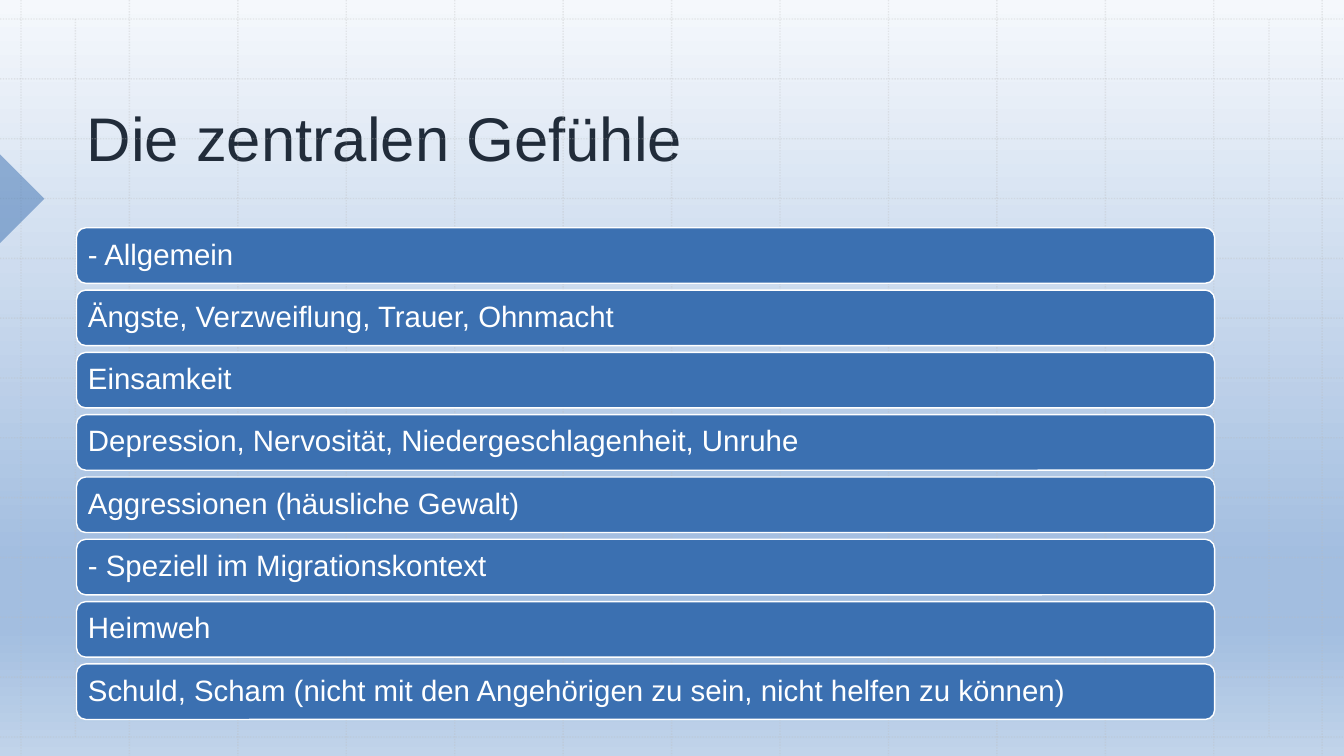
import pptx
import pptx.dml.color
import pptx.enum.dml
import pptx.enum.shapes
import pptx.enum.text
import pptx.oxml.ns
import pptx.util
from lxml import etree

Cm = pptx.util.Cm
Pt = pptx.util.Pt
RGB = pptx.dml.color.RGBColor.from_string
qn = pptx.oxml.ns.qn
MSO_SHAPE = pptx.enum.shapes.MSO_SHAPE
MSO_ANCHOR = pptx.enum.text.MSO_ANCHOR
PP_ALIGN = pptx.enum.text.PP_ALIGN

COLORS = {"grid": "BCBCBC", "blue": "3B70B1", "white": "FFFFFF", "title": "212C3A"}
BACKGROUND = [(0, "F5F8FC"), (74, "A3BEE0"), (83, "A3BEE0"), (100, "C1D4EA")]
FEELINGS = [
    "- Allgemein",
    "Ängste, Verzweiflung, Trauer, Ohnmacht",
    "Einsamkeit",
    "Depression, Nervosität, Niedergeschlagenheit, Unruhe",
    "Aggressionen (häusliche Gewalt)",
    "- Speziell im Migrationskontext",
    "Heimweh",
    "Schuld, Scham (nicht mit den Angehörigen zu sein, nicht helfen zu können)",
]
WIDTH, HEIGHT = 33.87, 19.05
GRID_LEFT, GRID_RIGHT = 0.53, 33.32
GRID_TOP, GRID_BOTTOM = 0.48, 18.57
GRID_STEPS = 12
LEFT, CONTENT_WIDTH = 1.93, 28.68
BAR_TOP, BAR_HEIGHT, BAR_PITCH = 5.74, 1.4, 1.57


def set_alpha(sp, percent):
    """Make the first solid colour of a shape or line partly transparent."""
    color = sp._element.spPr.find(".//" + qn("a:srgbClr"))
    etree.SubElement(color, qn("a:alpha"), val=str(percent * 1000))


def format_text(tf, size, color, anchor):
    tf.word_wrap = True
    tf.vertical_anchor = anchor
    p = tf.paragraphs[0]
    p.alignment = PP_ALIGN.LEFT
    p.line_spacing = 0.9
    font = p.runs[0].font
    font.name = "Arial"
    font.size = Pt(size)
    font.color.rgb = RGB(COLORS[color])


prs = pptx.Presentation()
prs.slide_width, prs.slide_height = Cm(WIDTH), Cm(HEIGHT)
s = prs.slides.add_slide(prs.slide_layouts[5])

# Background gradient, top to bottom
fill = s.background.fill
fill.gradient()
fill.gradient_angle = 270
stops = s._element.find(".//" + qn("a:gsLst"))
for stop in list(stops):
    stops.remove(stop)
for position, color in BACKGROUND:
    stop = etree.SubElement(stops, qn("a:gs"), pos=str(position * 1000))
    etree.SubElement(stop, qn("a:srgbClr"), val=color)

# Dotted grid
x_step = (GRID_RIGHT - GRID_LEFT) / GRID_STEPS
y_step = (GRID_BOTTOM - GRID_TOP) / GRID_STEPS
grid = []
for i in range(GRID_STEPS + 1):
    x = GRID_LEFT + i * x_step
    y = GRID_TOP + i * y_step
    grid += [(x, 0, x, HEIGHT), (0, y, WIDTH, y)]
for x in (1.9, 31.98):
    grid.append((x, GRID_TOP, x, GRID_BOTTOM))
for ends in grid:
    line = s.shapes.add_connector(
        pptx.enum.shapes.MSO_CONNECTOR.STRAIGHT, *[Cm(v) for v in ends])
    line.line.color.rgb = RGB(COLORS["grid"])
    line.line.width = Pt(1)
    line.line.dash_style = pptx.enum.dml.MSO_LINE.ROUND_DOT
    set_alpha(line, 30)
    etree.SubElement(line._element.spPr, qn("a:effectLst"))

# Marker at the left edge
marker = s.shapes.add_shape(
    MSO_SHAPE.RIGHT_TRIANGLE, Cm(-0.79), Cm(4.22), Cm(1.58), Cm(1.58))
marker.rotation = 225
marker.shadow.inherit = False
marker.fill.solid()
marker.fill.fore_color.rgb = RGB(COLORS["blue"])
marker.line.fill.background()
set_alpha(marker, 50)

title = s.shapes.title
title.left, title.top = Cm(LEFT), Cm(2.01)
title.width, title.height = Cm(CONTENT_WIDTH), Cm(2.51)
title.text_frame.text = "Die zentralen Gefühle"
format_text(title.text_frame, 44, "title", MSO_ANCHOR.BOTTOM)

# One bar per feeling
for i, feeling in enumerate(FEELINGS):
    bar = s.shapes.add_shape(
        MSO_SHAPE.ROUNDED_RECTANGLE, Cm(LEFT), Cm(BAR_TOP + i * BAR_PITCH),
        Cm(CONTENT_WIDTH), Cm(BAR_HEIGHT))
    bar.shadow.inherit = False
    bar.fill.solid()
    bar.fill.fore_color.rgb = RGB(COLORS["blue"])
    bar.line.color.rgb = RGB(COLORS["white"])
    bar.line.width = Pt(1)
    tf = bar.text_frame
    tf.text = feeling
    tf.margin_left = tf.margin_right = Cm(0.22)
    tf.margin_top = tf.margin_bottom = Cm(0.22)
    format_text(tf, 21, "white", MSO_ANCHOR.MIDDLE)

prs.save("out.pptx")
